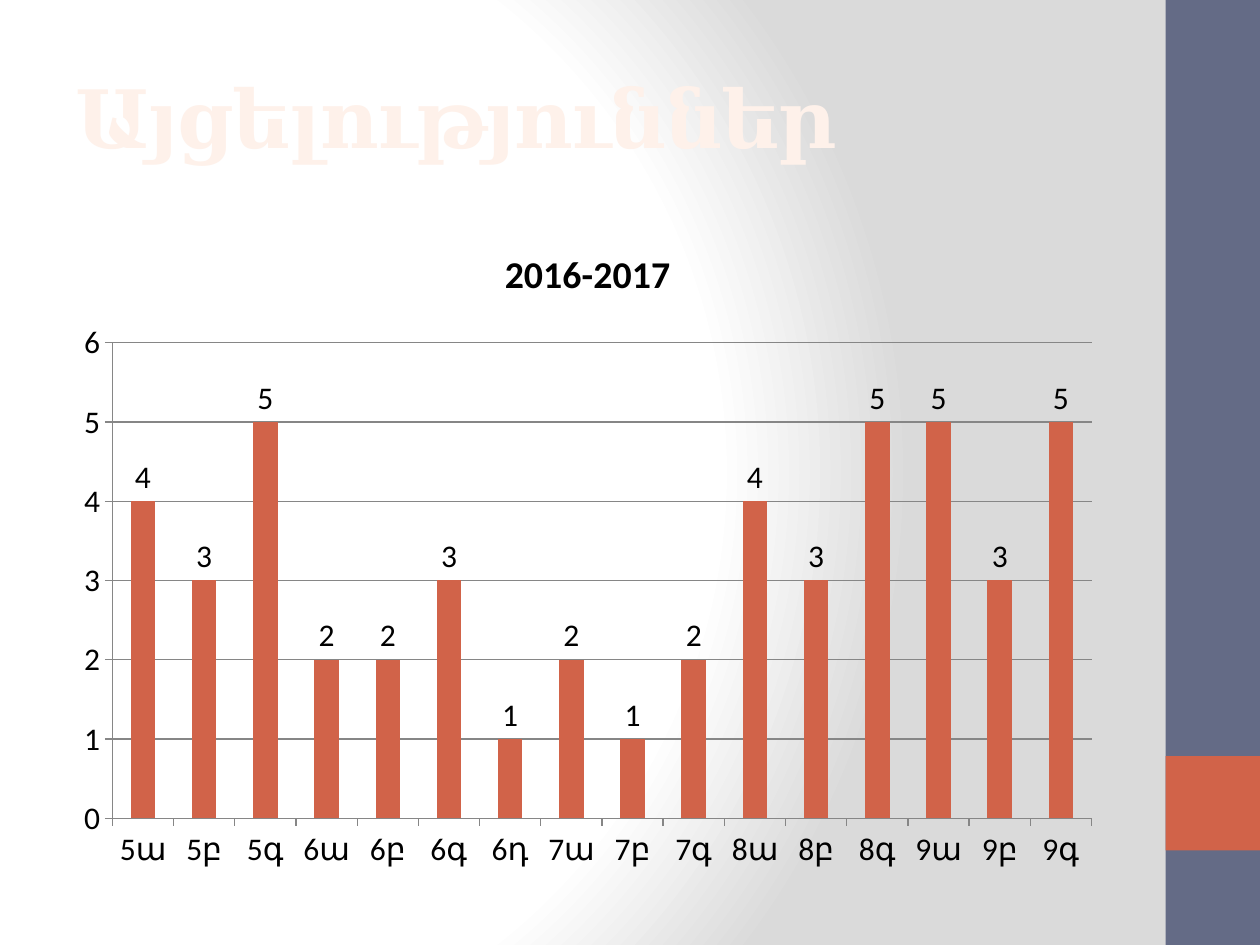
import pptx
import pptx.chart.data
import pptx.dml.color
import pptx.enum.chart
import pptx.enum.shapes
import pptx.enum.text
import pptx.oxml
import pptx.oxml.ns
import pptx.util

Inches = pptx.util.Inches
Pt = pptx.util.Pt
RGB = pptx.dml.color.RGBColor
Enum = pptx.enum.chart

SLATE = RGB(0x64, 0x6B, 0x86)
RUST = RGB(0xD1, 0x63, 0x49)
CREAM = RGB(0xFE, 0xF1, 0xEA)
AMBER = RGB(0xC8, 0x6D, 0x09)
WHITE = RGB(0xFF, 0xFF, 0xFF)
SILVER = RGB(0xDA, 0xDA, 0xDA)
GRAY = RGB(0x86, 0x86, 0x86)
BLACK = RGB(0, 0, 0)

CLASSES = ["5ա", "5բ", "5գ", "6ա", "6բ", "6գ", "6դ", "7ա",
           "7բ", "7գ", "8ա", "8բ", "8գ", "9ա", "9բ", "9գ"]
VISITS = [4, 3, 5, 2, 2, 3, 1, 2, 1, 2, 4, 3, 5, 5, 3, 5]


def make(xml):
    space = pptx.oxml.ns.nsdecls("a")
    return pptx.oxml.parse_xml(xml.replace(">", f" {space}>", 1))


def write(frame, text, size=18, font="Calibri", color=BLACK, bold=False, align=None):
    para = frame.paragraphs[0]
    para.alignment = align
    run = para.add_run()
    run.text = text
    run.font.size = Pt(size)
    run.font.name = font
    run.font.color.rgb = color
    run.font.bold = bold
    return run


class Page:
    font = "Calibri"
    size = 18

    def __init__(self, deck):
        self.slide = deck.slides.add_slide(deck.slide_layouts[5])

    def shade(self, stops):
        fill = self.slide.background.fill
        fill.solid()
        solid = self.slide.element.xpath(".//p:bgPr/a:solidFill")[0]
        marks = "".join(
            f'<a:gs pos="{pos * 1000}"><a:srgbClr val="{color}"/></a:gs>'
            for pos, color in stops)
        grad = make(
            f'<a:gradFill rotWithShape="1"><a:gsLst>{marks}</a:gsLst>'
            '<a:path path="circle"><a:fillToRect l="20000" t="50000" '
            'r="100000" b="50000"/></a:path></a:gradFill>')
        solid.getparent().replace(solid, grad)

    def block(self, left, top, width, height, color):
        shape = self.slide.shapes.add_shape(
            pptx.enum.shapes.MSO_SHAPE.RECTANGLE,
            Inches(left), Inches(top), Inches(width), Inches(height))
        shape.shadow.inherit = False
        shape.fill.solid()
        shape.fill.fore_color.rgb = color
        shape.line.fill.background()

    def title(self, text, left, top, width, height):
        head = self.slide.shapes.title
        head.left, head.top = Inches(left), Inches(top)
        head.width, head.height = Inches(width), Inches(height)
        frame = head.text_frame
        frame.word_wrap = True
        frame.vertical_anchor = pptx.enum.text.MSO_ANCHOR.MIDDLE
        run = write(frame, text, size=46, font="Cambria", color=CREAM,
                    bold=True, align=pptx.enum.text.PP_ALIGN.LEFT)
        props = run.font._element
        props.set("spc", "-100")
        props.insert(0, make(
            f'<a:ln w="{Pt(2.48)}"><a:solidFill><a:srgbClr val="{AMBER}"/>'
            '</a:solidFill></a:ln>'))

    def columns(self, name, cats, vals, left, top, width, height):
        data = pptx.chart.data.CategoryChartData()
        data.categories = cats
        data.add_series("Series 1", vals)
        chart = self.slide.shapes.add_chart(
            Enum.XL_CHART_TYPE.COLUMN_CLUSTERED, Inches(left), Inches(top),
            Inches(width), Inches(height), data).chart
        chart.font.size = Pt(self.size)
        chart.font.name = self.font
        chart.font.color.rgb = BLACK
        chart.has_legend = False
        chart.has_title = True
        write(chart.chart_title.text_frame, name, size=21.6, bold=True)
        chart.chart_title.include_in_layout = False
        for axis in (chart.category_axis, chart.value_axis):
            axis.major_tick_mark = Enum.XL_TICK_MARK.OUTSIDE
            axis.format.line.color.rgb = GRAY
            axis.format.line.width = Pt(0.75)
        chart.value_axis.has_major_gridlines = True
        grid = chart.value_axis.major_gridlines.format.line
        grid.color.rgb = GRAY
        grid.width = Pt(0.75)
        plot = chart.plots[0]
        plot.gap_width = 150
        plot.vary_by_categories = False
        bars = plot.series[0]
        bars.format.fill.solid()
        bars.format.fill.fore_color.rgb = RUST
        labels = bars.data_labels
        labels.show_value = True
        labels.position = Enum.XL_LABEL_POSITION.OUTSIDE_END


def main():
    deck = pptx.Presentation()
    deck.slide_width, deck.slide_height = Inches(10), Inches(7.5)
    page = Page(deck)
    page.shade([(0, WHITE), (75, WHITE), (100, SILVER)])
    page.block(9.25, 0, 0.75, 7.5, SLATE)
    page.block(9.25, 6, 0.75, 0.75, RUST)
    page.columns("2016-2017", CLASSES, VISITS, 0.5, 1.75, 8.33, 5.25)
    page.title("Այցելություններ", 0.5, 0.3, 8.33, 1.25)
    deck.save("out.pptx")


if __name__ == "__main__":
    main()
